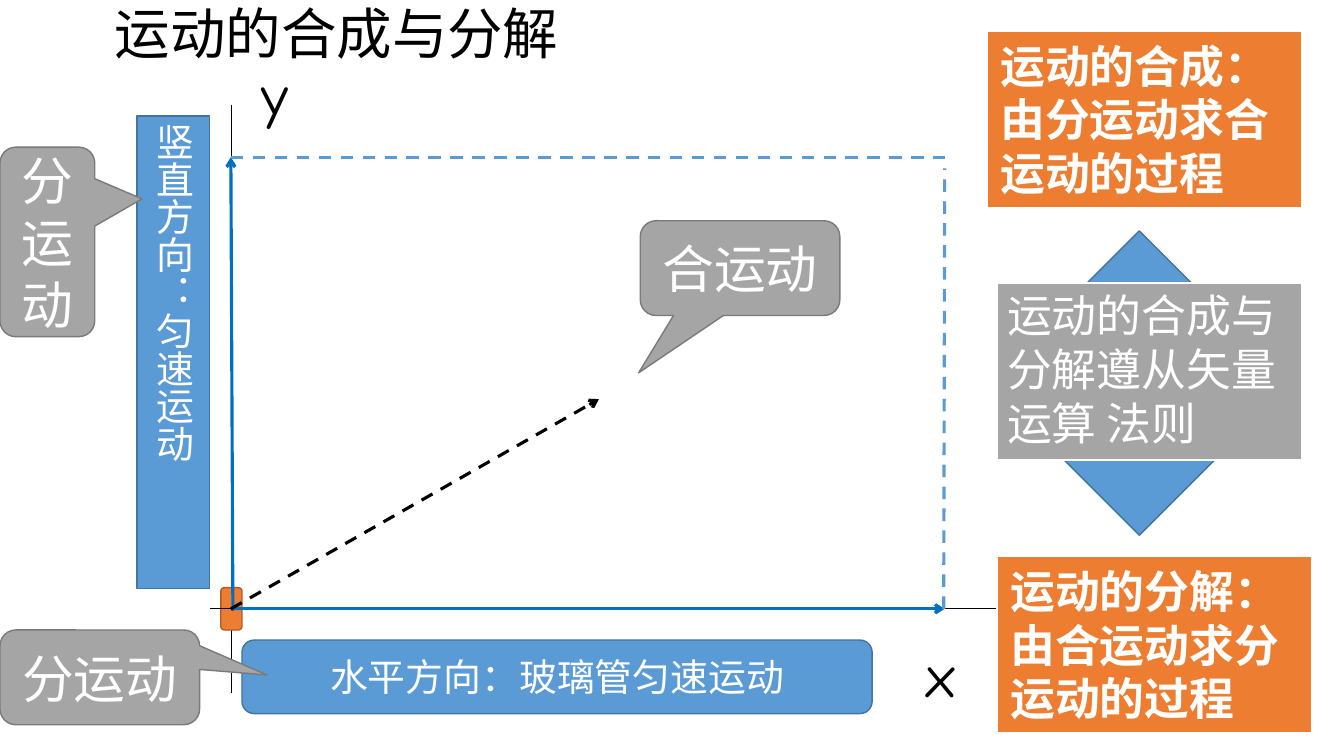
from collections import namedtuple

from lxml.etree import SubElement
from pptx import Presentation
from pptx.dml.color import RGBColor
from pptx.enum.dml import MSO_LINE
from pptx.enum.shapes import MSO_CONNECTOR, MSO_SHAPE
from pptx.enum.text import MSO_ANCHOR, MSO_AUTO_SIZE, PP_ALIGN
from pptx.oxml.ns import qn
from pptx.util import Inches, Pt

BLACK = RGBColor(0x00, 0x00, 0x00)
WHITE = RGBColor(0xFF, 0xFF, 0xFF)
BLUE = RGBColor(0x5B, 0x9B, 0xD5)
BLUE_EDGE = RGBColor(0x43, 0x73, 0x9E)
VECTOR_BLUE = RGBColor(0x00, 0x70, 0xC0)
ORANGE = RGBColor(0xED, 0x7D, 0x31)
ORANGE_EDGE = RGBColor(0xAF, 0x5C, 0x24)
GRAY = RGBColor(0xA5, 0xA5, 0xA5)
GRAY_EDGE = RGBColor(0x7A, 0x7A, 0x7A)

WIDE_INSETS = (0.13, 0.07)
NORMAL_INSETS = (0.1, 0.05)

Box = namedtuple("Box", "left top width height")


def within(region, left, top, width, height):
    """Return a box placed relative to the corner of a region."""
    return Box(region.left + left, region.top + top, width, height)


def write_text(shape, text, size, color=WHITE, font="Calibri", bold=False,
               align=PP_ALIGN.LEFT, anchor=MSO_ANCHOR.TOP, insets=WIDE_INSETS,
               grow=False, vertical=False, spacing=None):
    """Fill a shape with one formatted paragraph."""
    frame = shape.text_frame
    frame.word_wrap = True
    frame.auto_size = MSO_AUTO_SIZE.SHAPE_TO_FIT_TEXT if grow else MSO_AUTO_SIZE.NONE
    frame.vertical_anchor = anchor
    frame.margin_left = frame.margin_right = Inches(insets[0])
    frame.margin_top = frame.margin_bottom = Inches(insets[1])
    if vertical:
        shape.element.txBody.bodyPr.set("vert", "eaVert")
    paragraph = frame.paragraphs[0]
    paragraph.alignment = align
    paragraph.line_spacing = spacing
    run = paragraph.add_run()
    run.text = text
    run.font.name = font
    run.font.size = Pt(size)
    run.font.bold = bold
    run.font.color.rgb = color


def add_label(slide, box, text, size, **text_format):
    """Add a plain text box."""
    label = slide.shapes.add_textbox(*map(Inches, box))
    write_text(label, text, size, **text_format)


def add_figure(slide, kind, box, fill, edge, edge_width=1, adjustments=()):
    """Add a filled and outlined preset shape."""
    shape = slide.shapes.add_shape(kind, *map(Inches, box))
    shape.shadow.inherit = False
    shape.fill.solid()
    shape.fill.fore_color.rgb = fill
    shape.line.color.rgb = edge
    shape.line.width = Pt(edge_width)
    for index, value in enumerate(adjustments):
        shape.adjustments[index] = value
    return shape


def add_line(slide, region, start, end, color, width=2.25, dashed=False, arrow=False):
    """Draw a straight line between two points of a region."""
    points = [Inches(value) for x, y in (start, end)
              for value in (region.left + x, region.top + y)]
    line = slide.shapes.add_connector(MSO_CONNECTOR.STRAIGHT, *points)
    line.line.color.rgb = color
    line.line.width = Pt(width)
    if dashed:
        line.line.dash_style = MSO_LINE.DASH
    if arrow:
        SubElement(line.line._get_or_add_ln(), qn("a:tailEnd"), type="arrow")
    SubElement(line.element.spPr, qn("a:effectLst"))


def add_callout(slide, box, text, pointer):
    """Add a gray speech callout whose tip follows the pointer."""
    callout = add_figure(slide, MSO_SHAPE.ROUNDED_RECTANGULAR_CALLOUT, box,
                         GRAY, GRAY_EDGE, adjustments=(*pointer, 0.167))
    write_text(callout, text, 37, align=PP_ALIGN.CENTER, anchor=MSO_ANCHOR.MIDDLE)


def add_title(slide, region):
    """Write the slide title."""
    add_label(slide, region, "运动的合成与分解", 39.6, color=BLACK,
              anchor=MSO_ANCHOR.MIDDLE, insets=NORMAL_INSETS, spacing=0.9)


def add_motion_diagram(slide, region):
    """Draw the axes, the component motions and the resultant."""
    origin_x, origin_y = 2.29, 5.0
    right, top = 9.37, 0.52
    origin = (origin_x, origin_y)

    add_line(slide, region, (origin_x, 0), (origin_x, 5.84), BLACK, 0.5)
    add_figure(slide, MSO_SHAPE.ROUNDED_RECTANGLE,
               within(region, origin_x - 0.1, origin_y - 0.21, 0.21, 0.42),
               ORANGE, ORANGE_EDGE)
    add_line(slide, region, (region.width, origin_y), (2.08, origin_y), BLACK, 0.5)

    horizontal = add_figure(slide, MSO_SHAPE.FLOWCHART_ALTERNATE_PROCESS,
                            within(region, 2.4, 5.31, 6.25, 0.73), BLUE, BLUE_EDGE)
    write_text(horizontal, "水平方向：玻璃管匀速运动", 27,
               align=PP_ALIGN.CENTER, anchor=MSO_ANCHOR.MIDDLE)
    upright = add_figure(slide, MSO_SHAPE.RECTANGLE,
                         within(region, 1.36, 0.11, 0.72, 4.69), BLUE, BLUE_EDGE)
    write_text(upright, "竖直方向：匀速运动", 27, grow=True, vertical=True)

    add_line(slide, region, origin, (right, origin_y), VECTOR_BLUE, arrow=True)
    add_line(slide, region, (origin_x + 0.02, origin_y + 0.02), (origin_x, top),
             VECTOR_BLUE, arrow=True)
    add_line(slide, region, (origin_x, top), (right, top), BLUE, dashed=True)
    add_line(slide, region, (right - 0.01, origin_y), (right, top + 0.11),
             BLUE, dashed=True)

    for name, left, label_top, insets in (("y", 2.5, -0.52, NORMAL_INSETS),
                                          ("x", 9.06, 5.21, WIDE_INSETS)):
        add_label(slide, within(region, left, label_top, 0.73, 0.85), name, 43,
                  color=BLACK, font="Comic Neue", insets=insets, grow=True)

    add_callout(slide, within(region, 0, 0.42, 0.94, 1.88), "分运动", (0.999, -0.227))
    add_callout(slide, within(region, 0, 5.21, 1.98, 0.94), "分运动", (0.839, -0.024))
    add_callout(slide, within(region, 6.35, 1.15, 1.98, 0.94), "合运动", (-0.508, 1.105))
    add_line(slide, region, origin, (5.94, 2.92), BLACK, dashed=True, arrow=True)


def add_summary(slide, region):
    """Stack the two definitions around the vector rule."""
    add_figure(slide, MSO_SHAPE.UP_DOWN_ARROW, within(region, 0.52, 1.98, 1.98, 3.02),
               BLUE, BLUE_EDGE, adjustments=(0.5, 0.283))
    panels = (
        ("运动的合成：由分运动求合运动的过程", 0, 0, 3.12, ORANGE, True, WIDE_INSETS),
        ("运动的合成与分解遵从矢量运算 法则", 0.1, 2.5, 3.02, GRAY, False, NORMAL_INSETS),
        ("运动的分解：由合运动求分运动的过程", 0.1, 5.21, 3.12, ORANGE, True, WIDE_INSETS),
    )
    for text, left, top, width, fill, bold, insets in panels:
        panel = add_figure(slide, MSO_SHAPE.RECTANGLE,
                           within(region, left, top, width, 1.75), fill, WHITE, 1.5)
        write_text(panel, text, 32, bold=bold, insets=insets, grow=True)


def main():
    """Build the slide and save it."""
    presentation = Presentation()
    presentation.slide_width = Inches(13.33)
    presentation.slide_height = Inches(7.5)
    slide = presentation.slides.add_slide(presentation.slide_layouts[6])
    add_title(slide, Box(1.04, 0, 11.77, 0.73))
    add_motion_diagram(slide, Box(0, 1.04, 9.89, 6.15))
    add_summary(slide, Box(9.79, 0.31, 3.22, 6.96))
    presentation.save("out.pptx")


if __name__ == "__main__":
    main()
